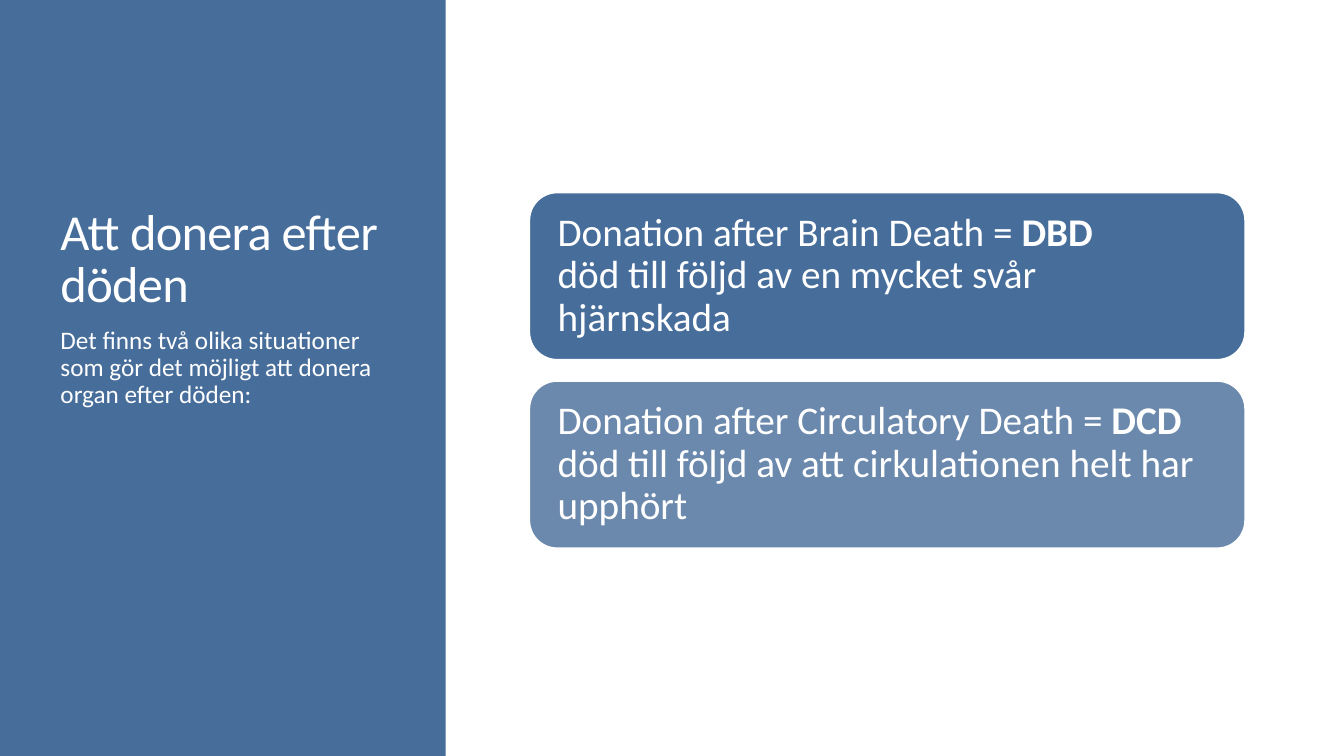
"""Build a slide on the two situations that allow organ donation after death."""
from pptx import Presentation
from pptx.dml.color import RGBColor
from pptx.enum import shapes, text
from pptx.util import Inches, Pt

COLORS = {"blue": "476D9B", "light_blue": "6B89AD", "white": "FFFFFF"}
SITUATIONS = [
    ("Donation after Brain Death = ", "DBD",
     "död till följd av en mycket svår hjärnskada", "blue"),
    ("Donation after Circulatory Death = ", "DCD",
     "död till följd av att cirkulationen helt har upphört", "light_blue"),
]


def add_filled(kind, left, top, width, height, color):
    shape = page.shapes.add_shape(
        kind, Inches(left), Inches(top), Inches(width), Inches(height))
    shape.shadow.inherit = False
    shape.fill.solid()
    shape.fill.fore_color.rgb = RGBColor.from_string(COLORS[color])
    shape.line.fill.background()
    return shape


def style_paragraph(para, size, line_spacing):
    para.alignment = text.PP_ALIGN.LEFT
    para.line_spacing = line_spacing
    para.font.name = "Calibri"
    para.font.size = Pt(size)
    para.font.color.rgb = RGBColor.from_string(COLORS["white"])


deck = Presentation()
deck.slide_width, deck.slide_height = Inches(13.33), Inches(7.5)
page = deck.slides.add_slide(deck.slide_layouts[1])
title, body = page.shapes.title, page.placeholders[1]

panel = add_filled(shapes.MSO_SHAPE.RECTANGLE, 0, 0, 4.43, 7.5, "blue")
edge = add_filled(shapes.MSO_SHAPE.RECTANGLE, 4.42, 0, 0.07, 7.5, "white")
for backdrop in (panel, edge):
    title.element.addprevious(backdrop.element)

for holder, top, height, anchor, words, size, spacing in (
    (title, 0.65, 2.5, text.MSO_ANCHOR.BOTTOM, "Att donera efter döden", 36, 0.85),
    (body, 3.2, 3.7, text.MSO_ANCHOR.TOP,
     "Det finns två olika situationer som gör det möjligt att donera organ efter döden:",
     18, 0.9),
):
    holder.left, holder.top = Inches(0.5), Inches(top)
    holder.width, holder.height = Inches(3.5), Inches(height)
    frame = holder.text_frame
    frame.text = words
    frame.auto_size = text.MSO_AUTO_SIZE.NONE
    frame.vertical_anchor = anchor
    style_paragraph(frame.paragraphs[0], size, spacing)

title.text_frame.paragraphs[0].runs[0].font._element.set("spc", "-50")
intro = body.text_frame.paragraphs[0]
intro.space_before, intro.space_after = Pt(12), Pt(2)
intro_format = intro._p.get_or_add_pPr()
intro_format.set("marL", "0")
intro_format.set("indent", "0")
intro_format.insert_element_before(
    intro_format.makeelement(
        "{http://schemas.openxmlformats.org/drawingml/2006/main}buNone", {}),
    "a:tabLst", "a:defRPr", "a:extLst")

for index, (name, short_name, meaning, color) in enumerate(SITUATIONS):
    box = add_filled(shapes.MSO_SHAPE.ROUNDED_RECTANGLE,
                     5.25, 1.91 + 1.87 * index, 7.1, 1.66, color)
    box.line.color.rgb = RGBColor.from_string(COLORS["white"])
    box.line.width = Pt(1.25)
    frame = box.text_frame
    frame.word_wrap = True
    frame.vertical_anchor = text.MSO_ANCHOR.MIDDLE
    frame.margin_left = frame.margin_right = Inches(0.2)
    frame.margin_top = frame.margin_bottom = Inches(0.2)
    para = frame.paragraphs[0]
    style_paragraph(para, 28, 0.9)
    para.add_run().text = name
    span = para.add_run()
    span.text = short_name
    span.font.bold = True
    para.add_line_break()
    para.add_run().text = meaning

deck.save("out.pptx")
